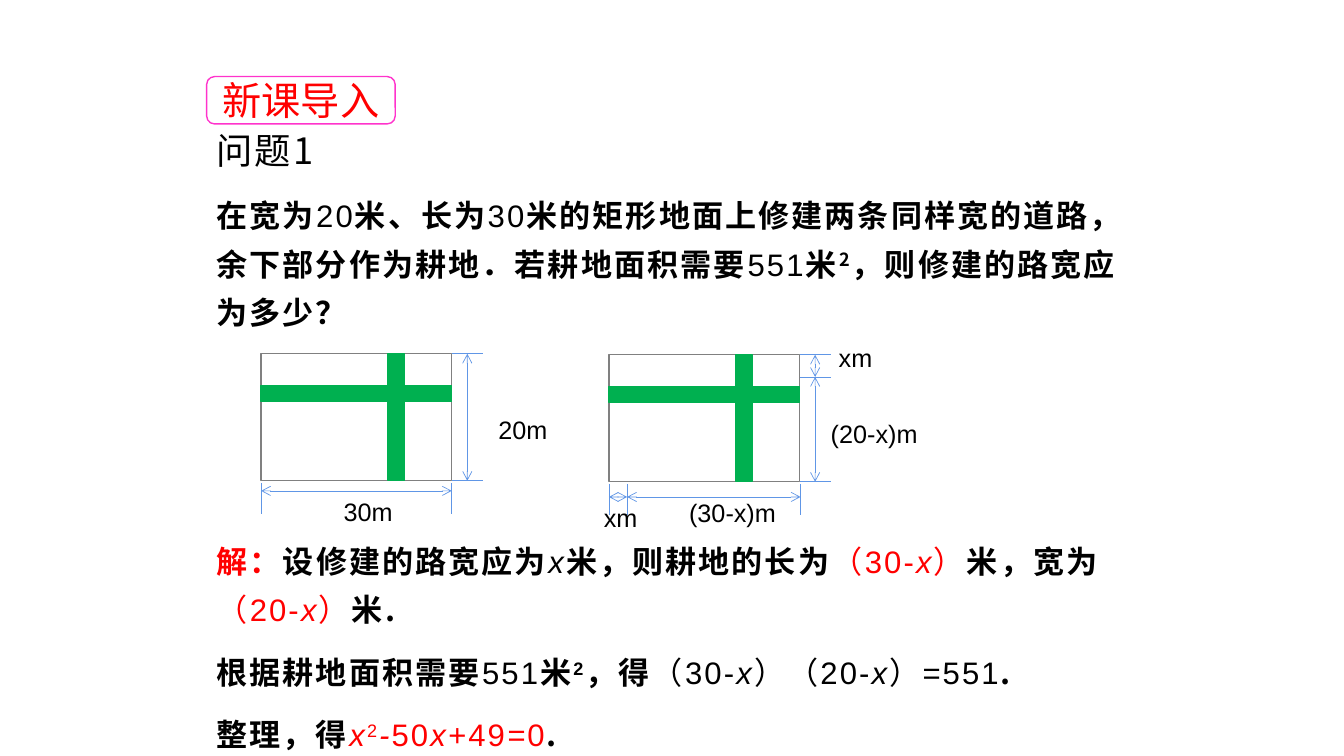
from dataclasses import dataclass
from itertools import pairwise

from lxml.etree import SubElement
from pptx import Presentation
from pptx.dml.color import RGBColor
from pptx.enum.shapes import MSO_CONNECTOR as Connector, MSO_SHAPE as Shape
from pptx.enum.text import MSO_ANCHOR as Anchor, PP_ALIGN as Align
from pptx.oxml.ns import qn
from pptx.util import Inches, Pt


@dataclass(frozen=True)
class Theme:
    ink: str = "000000"
    accent: str = "FF0000"
    paper: str = "FFFFFF"
    badge_edge: str = "FF33CC"
    field_edge: str = "808080"
    road: str = "00B050"
    dimension: str = "6096E6"
    latin: str = "Arial"
    chinese: str = "Noto Sans CJK SC"
    badge_size: float = 28
    heading_size: float = 25.9
    body_size: float = 22.2
    label_size: float = 18
    body_leading: float = 1.3
    paragraph_gap: float = 10
    tracking: int = 150


THEME = Theme()

HAN = {"face": THEME.chinese, "bold": True}
LATIN = {"face": THEME.latin}
VARIABLE = {**LATIN, "italic": True}
RED = {**LATIN, "color": THEME.accent}
RED_VARIABLE = {**RED, "italic": True}
SQUARE = {**HAN, "raised": True}

QUESTION = [
    [("问题1", {"face": THEME.chinese, "size": THEME.heading_size})],
    [("在宽为", HAN), ("20", LATIN), ("米、长为", HAN), ("30", LATIN),
     ("米的矩形地面上修建两条同样宽的道路，余下部分作为耕地．若耕地面积需要", HAN),
     ("551", LATIN), ("米", HAN), ("2", SQUARE), ("，则修建的路宽应为多少？", HAN)],
]

SOLUTION = [
    [("解：", {**RED, "bold": True}), ("设修建的路宽应为", HAN), ("x", VARIABLE),
     ("米，则耕地的长为", HAN), ("（30-", RED), ("x", RED_VARIABLE), ("）", RED),
     ("米，宽为", HAN), ("（20-", RED), ("x", RED_VARIABLE), ("）", RED), ("米.", HAN)],
    [("根据耕地面积需要", HAN), ("551", LATIN), ("米", HAN),
     ("2", {**SQUARE, "face": THEME.latin}), ("，得", HAN), ("（30-", LATIN),
     ("x", VARIABLE), ("）（20-", LATIN), ("x", VARIABLE), ("）=551", LATIN), (".", HAN)],
    [("整理，得", HAN), ("x", RED_VARIABLE), ("2", {**RED, "raised": True}),
     ("-", RED_VARIABLE), ("50", RED), ("x+", RED_VARIABLE), ("49", RED),
     ("=", RED_VARIABLE), ("0", RED), (".", HAN)],
]


def rgb(color):
    return RGBColor.from_string(color)


def add_run(paragraph, text, face, size=THEME.body_size, color=THEME.ink,
            bold=False, italic=False, raised=False, tracking=0):
    run = paragraph.add_run()
    run.text = text
    font = run.font
    font.size, font.bold, font.italic = Pt(size), bold, italic
    font.color.rgb = rgb(color)
    font.name = face
    properties = font._element
    SubElement(properties, qn("a:ea")).set("typeface", THEME.chinese)
    if tracking:
        properties.set("spc", str(tracking))
    if raised:
        properties.set("baseline", "30000")


def add_block(slide, left, top, width, height, fill, edge, preset=Shape.RECTANGLE):
    block = slide.shapes.add_shape(
        preset, Inches(left), Inches(top), Inches(width), Inches(height))
    block.shadow.inherit = False
    if fill:
        block.fill.solid()
        block.fill.fore_color.rgb = rgb(fill)
    else:
        block.fill.background()
    block.line.color.rgb = rgb(edge)
    block.line.width = Pt(1)
    return block


def add_dimension_line(slide, start, end, arrows=False):
    line = slide.shapes.add_connector(
        Connector.STRAIGHT, *(Inches(value) for value in (*start, *end)))
    line.line.color.rgb = rgb(THEME.dimension)
    line.line.width = Pt(0.5)
    properties = line._element.spPr
    if arrows:
        for tip in ("a:headEnd", "a:tailEnd"):
            SubElement(properties.find(qn("a:ln")), qn(tip)).set("type", "arrow")
    SubElement(properties, qn("a:effectLst"))


def add_label(slide, text, left, top, width, height):
    label = slide.shapes.add_textbox(
        Inches(left), Inches(top), Inches(width), Inches(height))
    frame = label.text_frame
    frame.word_wrap = True
    frame.vertical_anchor = Anchor.MIDDLE
    frame.margin_left = frame.margin_right = frame.margin_top = frame.margin_bottom = 0
    frame.paragraphs[0].alignment = Align.CENTER
    add_run(frame.paragraphs[0], text, THEME.latin, THEME.label_size)


def add_passage(slide, paragraphs, left, top, width, height):
    passage = slide.shapes.add_textbox(
        Inches(left), Inches(top), Inches(width), Inches(height))
    frame = passage.text_frame
    frame.word_wrap = True
    for index, runs in enumerate(paragraphs):
        paragraph = frame.add_paragraph() if index else frame.paragraphs[0]
        paragraph.line_spacing = THEME.body_leading
        paragraph.space_after = Pt(THEME.paragraph_gap)
        for text, style in runs:
            add_run(paragraph, text, tracking=THEME.tracking, **style)


def add_badge(slide, text, left, top, width, height):
    badge = add_block(slide, left, top, width, height, THEME.paper,
                      THEME.badge_edge, Shape.ROUNDED_RECTANGLE)
    frame = badge.text_frame
    frame.vertical_anchor = Anchor.MIDDLE
    frame.margin_top = frame.margin_bottom = 0
    frame.paragraphs[0].alignment = Align.CENTER
    add_run(frame.paragraphs[0], text, THEME.chinese, THEME.badge_size, THEME.accent)


def add_field(slide, left, top, width, height, across, down, across_gap, labels):
    road, tick, gap = 0.16, 0.31, 0.02
    add_block(slide, left, top, width, height, None, THEME.field_edge)
    add_block(slide, left + width * 2 / 3, top, road, height, THEME.road, THEME.road)
    add_block(slide, left, top + height / 4, width, road, THEME.road, THEME.road)

    right, bottom = left + width, top + height
    for x in across:
        add_dimension_line(slide, (left + x, bottom + gap), (left + x, bottom + gap + tick))
    for y in down:
        add_dimension_line(slide, (right, top + y), (right + tick, top + y))
    for start, end in pairwise(across):
        y = bottom + across_gap
        add_dimension_line(slide, (left + start, y), (left + end, y), arrows=True)
    for start, end in pairwise(down):
        x = right + tick / 2
        add_dimension_line(slide, (x, top + start), (x, top + end), arrows=True)
    for text, x, y, label_width in labels:
        add_label(slide, text, left + x, top + y, label_width, 0.36)


def add_lesson_slide(deck):
    slide = deck.slides.add_slide(deck.slide_layouts[6])
    left, width = 2.05, 9.34
    add_passage(slide, QUESTION, left, 1.09, width, 2.3)
    add_passage(slide, SOLUTION, left, 5.22, width, 2.3)
    add_field(slide, 6.04, 3.52, 1.89, 1.26, (0, 0.18, 1.9), (0, 0.22, 1.26), 0.15,
              [("xm", 2.17, -0.15, 0.55), ("(20-x)m", 2.04, 0.6, 1.18),
               ("xm", -0.16, 1.43, 0.55), ("(30-x)m", 0.55, 1.38, 1.35)])
    add_field(slide, 2.59, 3.51, 1.89, 1.26, (0, 1.89), (0, 1.26), 0.1,
              [("20m", 2.2, 0.57, 0.79), ("30m", 0.55, 1.38, 1.02)])
    add_badge(slide, "新课导入", left, 0.76, 1.87, 0.47)


def main():
    deck = Presentation()
    deck.slide_width, deck.slide_height = Inches(13.33), Inches(7.5)
    add_lesson_slide(deck)
    deck.save("out.pptx")


if __name__ == "__main__":
    main()
